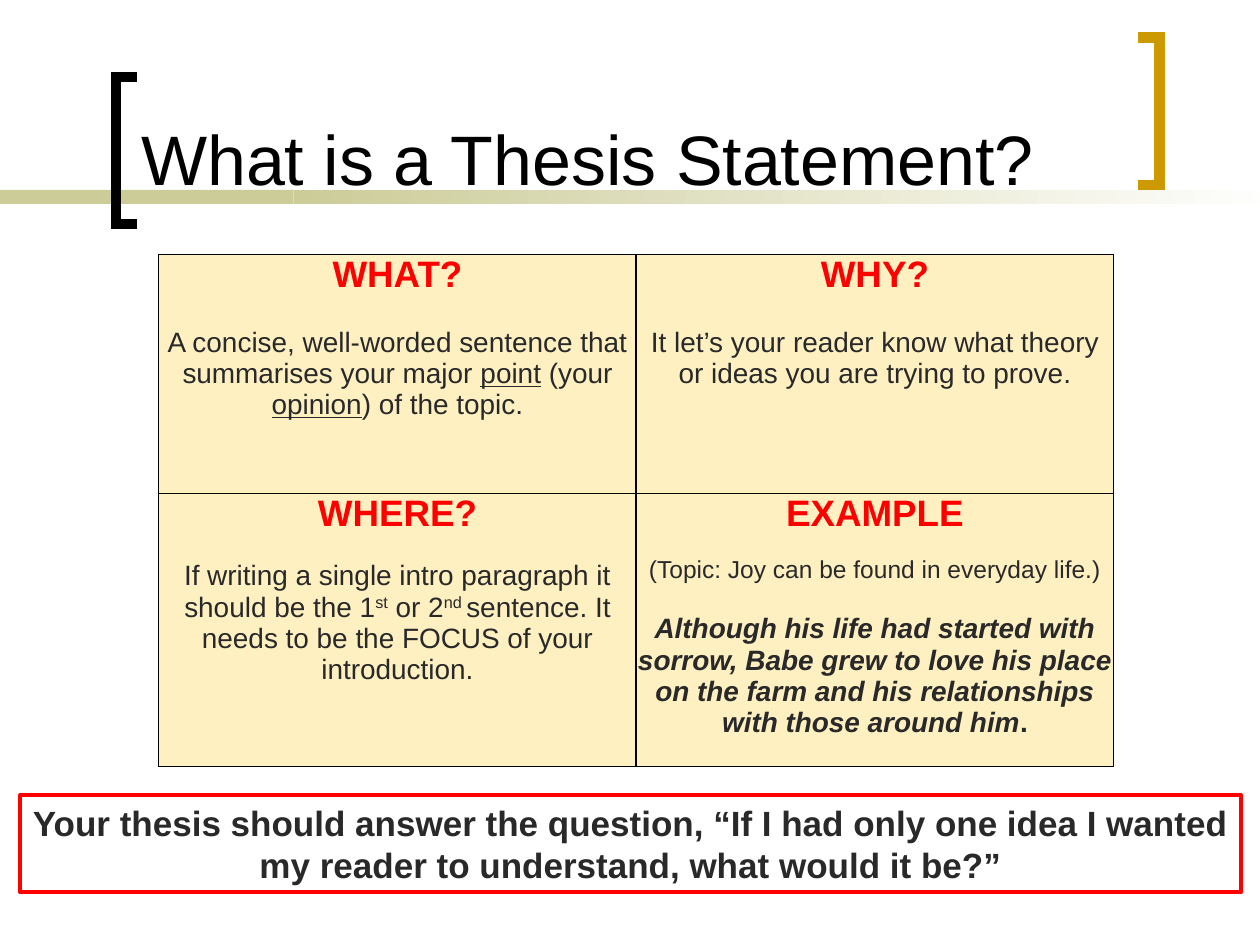
from lxml import etree
from pptx import Presentation
from pptx.dml.color import RGBColor
from pptx.enum.shapes import MSO_SHAPE
from pptx.enum.text import MSO_ANCHOR, PP_ALIGN
from pptx.oxml.ns import qn
from pptx.util import Cm, Pt

RECTANGLE = MSO_SHAPE.RECTANGLE
CENTER = PP_ALIGN.CENTER
MIDDLE, BOTTOM = MSO_ANCHOR.MIDDLE, MSO_ANCHOR.BOTTOM
TITLE_ONLY = 5
FONT = "Arial"
BLACK, WHITE, RED, INK = "000000", "FFFFFF", "FF0000", "292929"
OLIVE, GOLD, CREAM = "CCCC99", "CC9900", "FFF0C2"

QUADRANTS = [
    [
        [("WHAT?", 21, 0),
         ("A concise, well-worded sentence that summarises your major |u:point"
          "| (your |u:opinion|) of the topic.", 16, 18)],
        [("WHY?", 21, 0),
         ("It let’s your reader know what theory or ideas you are trying to prove.", 16, 18)],
    ],
    [
        [("WHERE?", 21, 0),
         ("If writing a single intro paragraph it should be the 1|^:st| or 2|^:nd "
          "|sentence. It needs to be the FOCUS of your introduction.", 16, 15)],
        [("EXAMPLE", 21, 0),
         ("(Topic: Joy can be found in everyday life.)", 14, 12.5),
         ("b:Although his life had started with sorrow, Babe grew to love his place on "
          "the farm and his relationships with those around him|.:.", 16, 17)],
    ],
]


def color(value):
    """Return the colour for a hex string."""
    return RGBColor.from_string(value)


def style_font(font, size, value, bold=False):
    """Set typeface, size, colour and weight."""
    font.name, font.size, font.bold = FONT, Pt(size), bold
    font.color.rgb = color(value)


def add_marked_runs(paragraph, text):
    """Add runs split at bars, each with an optional style mark before a colon."""
    for piece in text.split("|"):
        mark, colon, words = piece.partition(":")
        marked = colon and mark in ("u", "^", "b", ".")
        run = paragraph.add_run()
        run.text = words if marked else piece
        if not marked:
            continue
        if mark == "u":
            run.font.underline = True
        elif mark == "^":
            run.font._element.set("baseline", "30000")
        else:
            run.font.bold = True
            run.font.italic = mark == "b"


def add_band(slide, left, top, width, height, end=OLIVE):
    """Add a borderless band that fades from olive to the end colour."""
    band = slide.shapes.add_shape(RECTANGLE, left, top, width, height)
    band.shadow.inherit = False
    band.line.fill.background()
    if end == OLIVE:
        band.fill.solid()
        band.fill.fore_color.rgb = color(OLIVE)
        return
    band.fill.gradient()
    band.fill.gradient_angle = 0
    for stop, value in zip(band.fill.gradient_stops, (OLIVE, end)):
        stop.color.rgb = color(value)


def add_bracket(slide, spine, tip, top, height, value):
    """Add a square bracket whose arms reach from the spine to the tip."""
    builder = slide.shapes.build_freeform(tip, top)
    builder.add_line_segments(
        [(spine, top), (spine, top + height), (tip, top + height)], close=False)
    bracket = builder.convert_to_shape()
    bracket.shadow.inherit = False
    bracket.fill.background()
    bracket.line.color.rgb = color(value)
    bracket.line.width = Pt(6)
    etree.SubElement(bracket.line._get_or_add_ln(), qn("a:miter"), lim="800000")


def add_header(slide, left, top, width, height):
    """Place the title over its fading band, between two brackets."""
    band_top, band_height, split = top + Cm(3.63), Cm(0.28), Cm(5.92)
    add_band(slide, 0, band_top, split, band_height)
    add_band(slide, split, band_top, Cm(20.12), band_height, WHITE)
    arm, bracket_height = Cm(0.42), Cm(2.97)
    black_spine, gold_spine = left - Cm(0.25), left + Cm(20.78)
    add_bracket(slide, black_spine, black_spine + arm, top + Cm(1.35), bracket_height, BLACK)
    add_bracket(slide, gold_spine, gold_spine - arm, top + Cm(0.56), bracket_height, GOLD)

    title = slide.shapes.title
    title.left, title.top, title.width, title.height = left, top, width, height
    title.text_frame.text = "What is a Thesis Statement?"
    title.text_frame.vertical_anchor = BOTTOM
    paragraph = title.text_frame.paragraphs[0]
    paragraph.alignment = PP_ALIGN.LEFT
    style_font(paragraph.font, 40, BLACK)
    title.element.getparent().append(title.element)


def add_borders(cell):
    """Draw a thin black line on all four sides of a cell."""
    properties = cell._tc.get_or_add_tcPr()
    for side in ("a:lnL", "a:lnR", "a:lnT", "a:lnB"):
        line = etree.SubElement(properties, qn(side), w=str(Pt(1)))
        fill = etree.SubElement(line, qn("a:solidFill"))
        etree.SubElement(fill, qn("a:srgbClr"), val=BLACK)


def fill_cell(cell, entries):
    """Format a cell and write its heading and body paragraphs."""
    add_borders(cell)
    cell.fill.solid()
    cell.fill.fore_color.rgb = color(CREAM)
    cell.margin_left = cell.margin_right = cell.margin_top = cell.margin_bottom = 0
    frame = cell.text_frame
    for index, (text, size, gap) in enumerate(entries):
        paragraph = frame.add_paragraph() if index else frame.paragraphs[0]
        paragraph.alignment = CENTER
        paragraph.space_before = Pt(gap)
        add_marked_runs(paragraph, text)
        for run in paragraph.runs:
            style_font(run.font, size, INK if index else RED, run.font.bold or not index)


def add_quadrants(slide, left, top, width, row_heights):
    """Add the two-by-two table of questions."""
    frame = slide.shapes.add_table(2, 2, left, top, width, sum(row_heights))
    table = frame.table
    table.first_row = table.horz_banding = False
    for row, height, cells in zip(table.rows, row_heights, QUADRANTS):
        row.height = height
        for cell, entries in zip(row.cells, cells):
            fill_cell(cell, entries)


def add_question_box(slide, left, top, width, height):
    """Add the red-framed closing question."""
    box = slide.shapes.add_shape(RECTANGLE, left, top, width, height)
    box.shadow.inherit = False
    box.fill.background()
    box.line.color.rgb = color(RED)
    box.line.width = Pt(2.25)
    frame = box.text_frame
    frame.word_wrap = True
    frame.vertical_anchor = MIDDLE
    frame.text = ("Your thesis should answer the question, “If I had only one idea I "
                  "wanted my reader to understand, what would it be?”")
    paragraph = frame.paragraphs[0]
    paragraph.alignment = CENTER
    style_font(paragraph.font, 20, INK, True)


def main():
    """Build and save the presentation."""
    presentation = Presentation()
    presentation.slide_width, presentation.slide_height = Cm(25.4), Cm(19.05)
    slide = presentation.slides.add_slide(presentation.slide_layouts[TITLE_ONLY])
    add_header(slide, Cm(2.59), Cm(0.2), Cm(19.89), Cm(3.94))
    add_quadrants(slide, Cm(3.2), Cm(5.13), Cm(19.25), (Cm(4.82), Cm(5.5)))
    add_question_box(slide, Cm(0.41), Cm(16.03), Cm(24.61), Cm(1.96))
    presentation.save("out.pptx")


if __name__ == "__main__":
    main()
